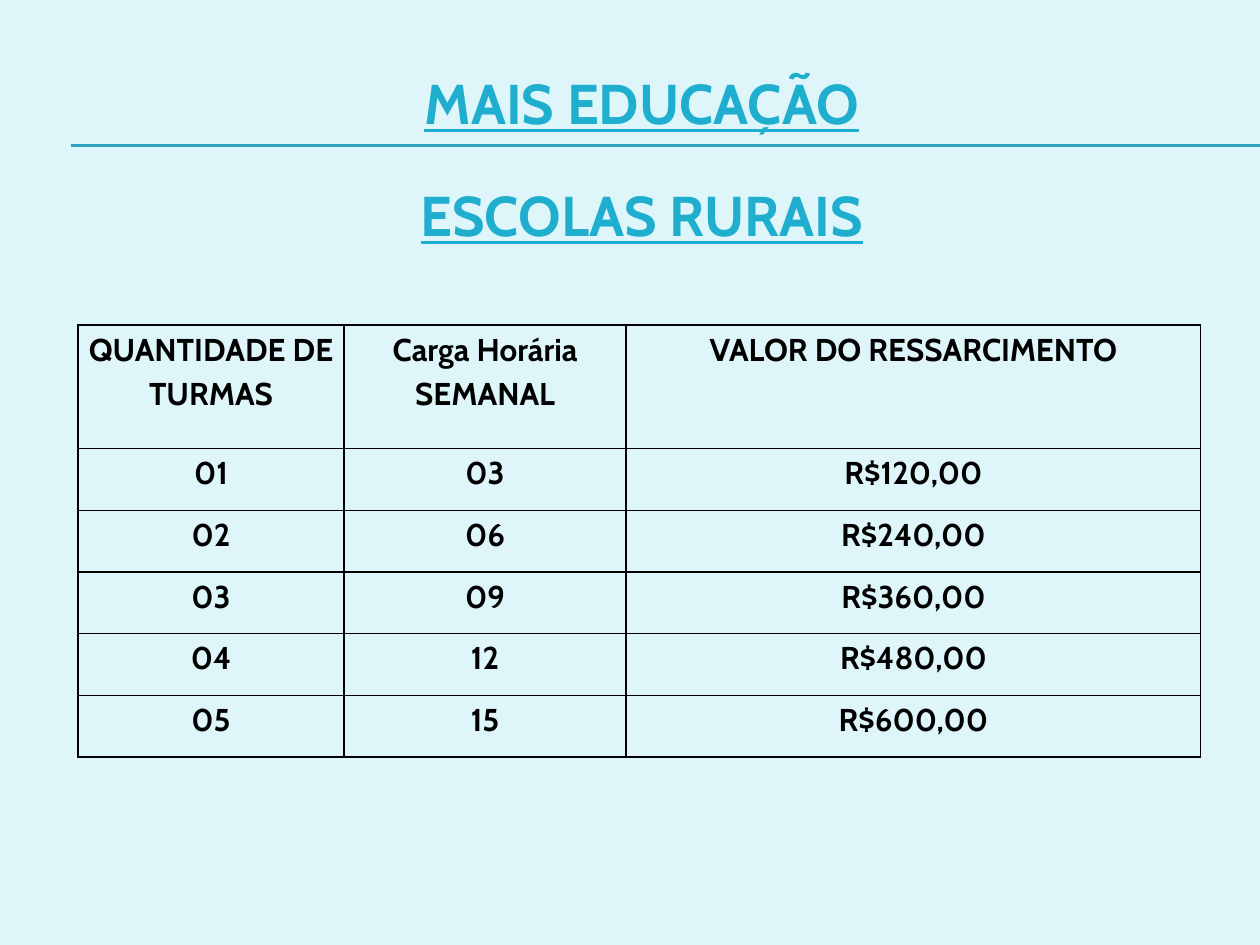
from lxml import etree
from pptx import Presentation, util as u
from pptx.dml.color import RGBColor
from pptx.enum import shapes, text
from pptx.oxml import ns

COLORS = {"background": "DEF5FA", "rule": "2DA2BF", "title": "1FAECD", "ink": "000000"}
FONT = "Cabin"
TITLE = ["MAIS EDUCAÇÃO", "ESCOLAS RURAIS"]
RULE_HEIGHTS = [1.15, 1.16]
HEADER = ["QUANTIDADE DE TURMAS", "Carga Horária SEMANAL", "VALOR DO RESSARCIMENTO"]
CLASSES = [
    ("01", "03", "R$120,00"),
    ("02", "06", "R$240,00"),
    ("03", "09", "R$360,00"),
    ("04", "12", "R$480,00"),
    ("05", "15", "R$600,00"),
]
COLUMN_WIDTHS = [2.11, 2.24, 4.56]
ROW_HEIGHTS = [0.98] + [0.49] * len(CLASSES)


def rgb(name):
    return RGBColor.from_string(COLORS[name])


def style(paragraph, size, color, spacing):
    paragraph.alignment = text.PP_ALIGN.CENTER
    paragraph.line_spacing = spacing
    paragraph.font.name = FONT
    paragraph.font.size = u.Pt(size)
    paragraph.font.bold = True
    paragraph.font.color.rgb = rgb(color)


def add_borders(cell):
    properties = cell._tc.get_or_add_tcPr()
    for position, side in enumerate(("lnL", "lnR", "lnT", "lnB")):
        border = etree.Element(ns.qn(f"a:{side}"), w=str(u.Pt(1)))
        fill = etree.SubElement(border, ns.qn("a:solidFill"))
        etree.SubElement(fill, ns.qn("a:srgbClr"), val=COLORS["ink"])
        properties.insert(position, border)


def add_rule(slide, y):
    rule = slide.shapes.add_connector(
        shapes.MSO_CONNECTOR.STRAIGHT, u.Inches(0.56), u.Inches(y), u.Inches(10), u.Inches(y))
    rule.line.color.rgb = rgb("rule")
    rule.line.width = u.Pt(0.75)
    etree.SubElement(rule._element.spPr, ns.qn("a:effectLst"))


def add_title(slide):
    title = slide.shapes.add_textbox(
        u.Inches(0.62), u.Inches(0.23), u.Inches(8.95), u.Inches(5.83)).text_frame
    title.word_wrap = True
    title.text = "\n".join(TITLE)
    for paragraph in title.paragraphs:
        style(paragraph, 32, "title", 1.5)
        paragraph.font.underline = True
        paragraph.space_before = u.Pt(6.4)


def add_payments(slide):
    rows = [HEADER, *CLASSES]
    payments = slide.shapes.add_table(
        len(rows), len(HEADER), u.Inches(0.62), u.Inches(2.58),
        u.Inches(sum(COLUMN_WIDTHS)), u.Inches(sum(ROW_HEIGHTS))).table
    payments.first_row = payments.horz_banding = False
    for column, width in zip(payments.columns, COLUMN_WIDTHS):
        column.width = u.Inches(width)
    for row, height, values in zip(payments.rows, ROW_HEIGHTS, rows):
        row.height = u.Inches(height)
        for cell, value in zip(row.cells, values):
            cell.text = value
            cell.margin_left = cell.margin_right = u.Inches(0.07)
            cell.margin_top = cell.margin_bottom = 0
            cell.fill.background()
            add_borders(cell)
            style(cell.text_frame.paragraphs[0], 18, "ink", 1.15)


def main():
    deck = Presentation()
    deck.slide_width, deck.slide_height = u.Inches(10), u.Inches(7.5)
    slide = deck.slides.add_slide(deck.slide_layouts[6])
    slide.background.fill.solid()
    slide.background.fill.fore_color.rgb = rgb("background")
    for y in RULE_HEIGHTS:
        add_rule(slide, y)
    add_title(slide)
    add_payments(slide)
    deck.save("out.pptx")


if __name__ == "__main__":
    main()
